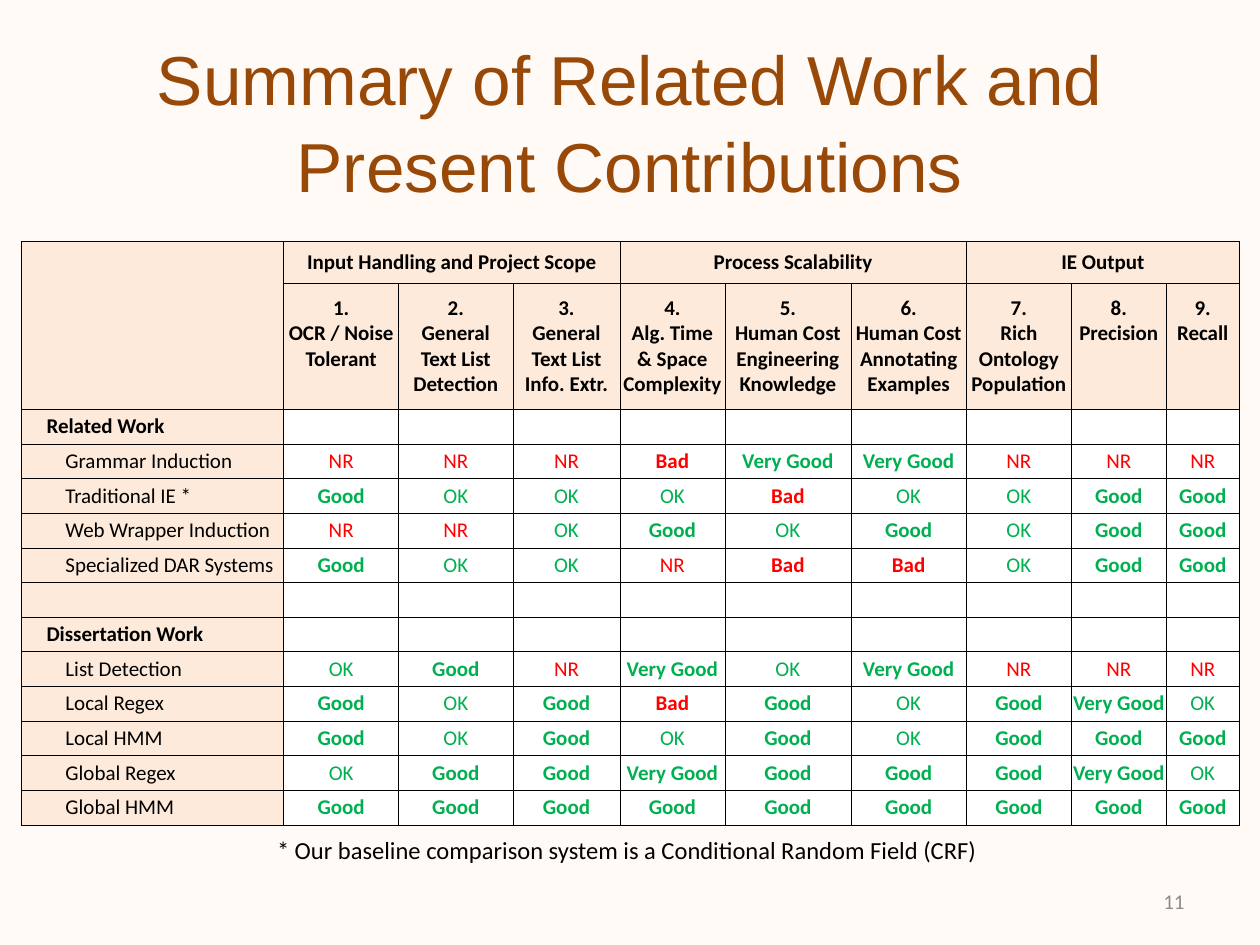
import pptx
import pptx.dml.color
import pptx.enum.text
import pptx.oxml
import pptx.oxml.ns
import pptx.util

Pt = pptx.util.Pt
RGBColor = pptx.dml.color.RGBColor
ALIGN = pptx.enum.text.PP_ALIGN
ANCHOR = pptx.enum.text.MSO_ANCHOR

BACKGROUND = RGBColor(0xFF, 0xFA, 0xF6)
BROWN = RGBColor(0x98, 0x48, 0x07)
PEACH = RGBColor(0xFD, 0xEA, 0xDA)
WHITE = RGBColor(0xFF, 0xFF, 0xFF)
BLACK = RGBColor(0x00, 0x00, 0x00)
GREY = RGBColor(0x8C, 0x8C, 0x8C)
RED = RGBColor(0xFF, 0x00, 0x00)
GREEN = RGBColor(0x00, 0xB0, 0x50)

GROUPS = ["Input Handling and Project Scope", "Process Scalability", "IE Output"]
CRITERIA = [
    "1.\nOCR / Noise Tolerant",
    "2.\nGeneral\nText List Detection",
    "3.\nGeneral Text List Info. Extr.",
    "4.\nAlg. Time\n& Space Complexity",
    "5.\nHuman Cost Engineering Knowledge",
    "6.\nHuman Cost Annotating Examples",
    "7.\nRich Ontology Population",
    "8.\nPrecision",
    "9.\nRecall",
]
# Rating code: wording, colour, bold
RATINGS = {
    "N": ("NR", RED, False),
    "B": ("Bad", RED, True),
    "O": ("OK", GREEN, False),
    "G": ("Good", GREEN, True),
    "V": ("Very Good", GREEN, True),
}
# Row label and one rating code per criterion; section rows have none
SYSTEMS = [
    ("Related Work", ""),
    ("Grammar Induction", "NNNBVVNNN"),
    ("Traditional IE *", "GOOOBOOGG"),
    ("Web Wrapper Induction", "NNOGOGOGG"),
    ("Specialized DAR Systems", "GOONBBOGG"),
    ("", ""),
    ("Dissertation Work", ""),
    ("List Detection", "OGNVOVNNN"),
    ("Local Regex", "GOGBGOGVO"),
    ("Local HMM", "GOGOGOGGG"),
    ("Global Regex", "OGGVGGGVO"),
    ("Global HMM", "GGGGGGGGG"),
]
COL_WIDTHS = [150, 65.6, 65.4, 61.1, 60, 72, 66, 60, 54.2, 41.8]
ROW_HEIGHTS = [24, 72] + [19.8] * len(SYSTEMS)


def format_text(tf, size, color, bold=False, align=ALIGN.CENTER, font="Calibri"):
    for p in tf.paragraphs:
        p.alignment = align
        for r in p.runs:
            r.font.name = font
            r.font.size = Pt(size)
            r.font.bold = bold
            r.font.color.rgb = color


def write_cell(cell, text, color=BLACK, bold=False, align=ALIGN.CENTER):
    cell.vertical_anchor = ANCHOR.MIDDLE
    cell.text_frame.text = text
    format_text(cell.text_frame, 12, color, bold, align)


prs = pptx.Presentation()
prs.slide_width, prs.slide_height = Pt(720), Pt(540)
s = prs.slides.add_slide(prs.slide_layouts[5])
s.background.fill.solid()
s.background.fill.fore_color.rgb = BACKGROUND

title = s.shapes.title
title.left, title.top, title.width, title.height = Pt(36), Pt(21.6), Pt(648), Pt(90)
tf = title.text_frame
tf.text = "Summary of Related Work and Present Contributions"
tf.word_wrap = True
tf.auto_size = pptx.enum.text.MSO_AUTO_SIZE.NONE
tf.vertical_anchor = ANCHOR.MIDDLE
tf.margin_top = Pt(7)
tf.paragraphs[0].line_spacing = 1.04
format_text(tf, 39.6, BROWN, font="Arial")

# Comparison table: size, borders and fills
table = s.shapes.add_table(
    len(ROW_HEIGHTS), len(COL_WIDTHS), Pt(12.2), Pt(138),
    Pt(sum(COL_WIDTHS)), Pt(sum(ROW_HEIGHTS))).table
table.first_row = table.horz_banding = False
for col, width in zip(table.columns, COL_WIDTHS):
    col.width = Pt(width)
for row, height in zip(table.rows, ROW_HEIGHTS):
    row.height = Pt(height)

for i in range(len(ROW_HEIGHTS)):
    for j in range(len(COL_WIDTHS)):
        cell = table.cell(i, j)
        cell.margin_left = cell.margin_right = cell.margin_top = cell.margin_bottom = 0
        tcPr = cell._tc.get_or_add_tcPr()
        for side in ("lnL", "lnR", "lnT", "lnB"):
            tcPr.append(pptx.oxml.parse_xml(
                f'<a:{side} {pptx.oxml.ns.nsdecls("a")} w="{Pt(0.5)}">'
                f'<a:solidFill><a:srgbClr val="{BLACK}"/></a:solidFill></a:{side}>'))
        cell.fill.solid()
        cell.fill.fore_color.rgb = PEACH if i < 2 or j == 0 else WHITE
        # Keeps empty cells from stretching their row
        cell.text_frame.paragraphs[0]._p.get_or_add_endParaRPr().set("sz", "1200")

# Header rows
table.cell(0, 0).merge(table.cell(1, 0))
for k, group in enumerate(GROUPS):
    first = 1 + 3 * k
    table.cell(0, first).merge(table.cell(0, first + 2))
    write_cell(table.cell(0, first), group, bold=True)
for j, criterion in enumerate(CRITERIA, start=1):
    cell = table.cell(1, j)
    write_cell(cell, criterion, bold=True)
    cell.vertical_anchor = ANCHOR.TOP
    cell.margin_top = Pt(6.7)

# Body rows
for i, (label, codes) in enumerate(SYSTEMS, start=2):
    if not label:
        continue
    cell = table.cell(i, 0)
    write_cell(cell, label, bold=not codes, align=ALIGN.LEFT)
    cell.margin_left = Pt(25.2 if codes else 14.4)
    for j, code in enumerate(codes, start=1):
        write_cell(table.cell(i, j), *RATINGS[code])

footnote = s.shapes.add_textbox(Pt(151.2), Pt(473.8), Pt(418.3), Pt(24.5))
footnote.text_frame.text = "* Our baseline comparison system is a Conditional Random Field (CRF)"
footnote.text_frame.word_wrap = False
format_text(footnote.text_frame, 14, BLACK, align=ALIGN.LEFT)

number = s.shapes.add_textbox(Pt(516), Pt(500.5), Pt(168), Pt(28.8))
number.text_frame.text = "11"
number.text_frame.word_wrap = True
number.text_frame.vertical_anchor = ANCHOR.MIDDLE
format_text(number.text_frame, 12, GREY, align=ALIGN.RIGHT)

prs.save("out.pptx")
